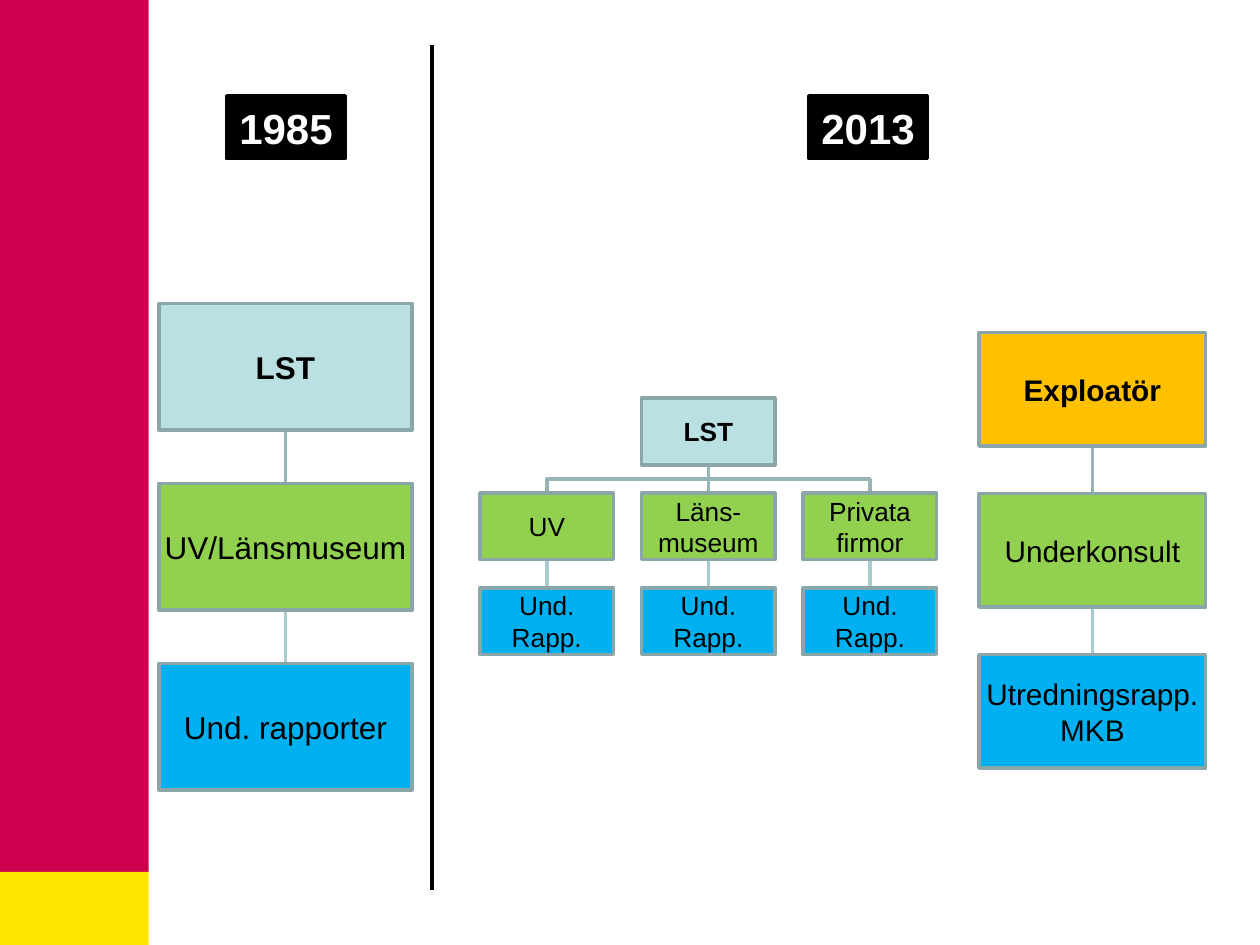
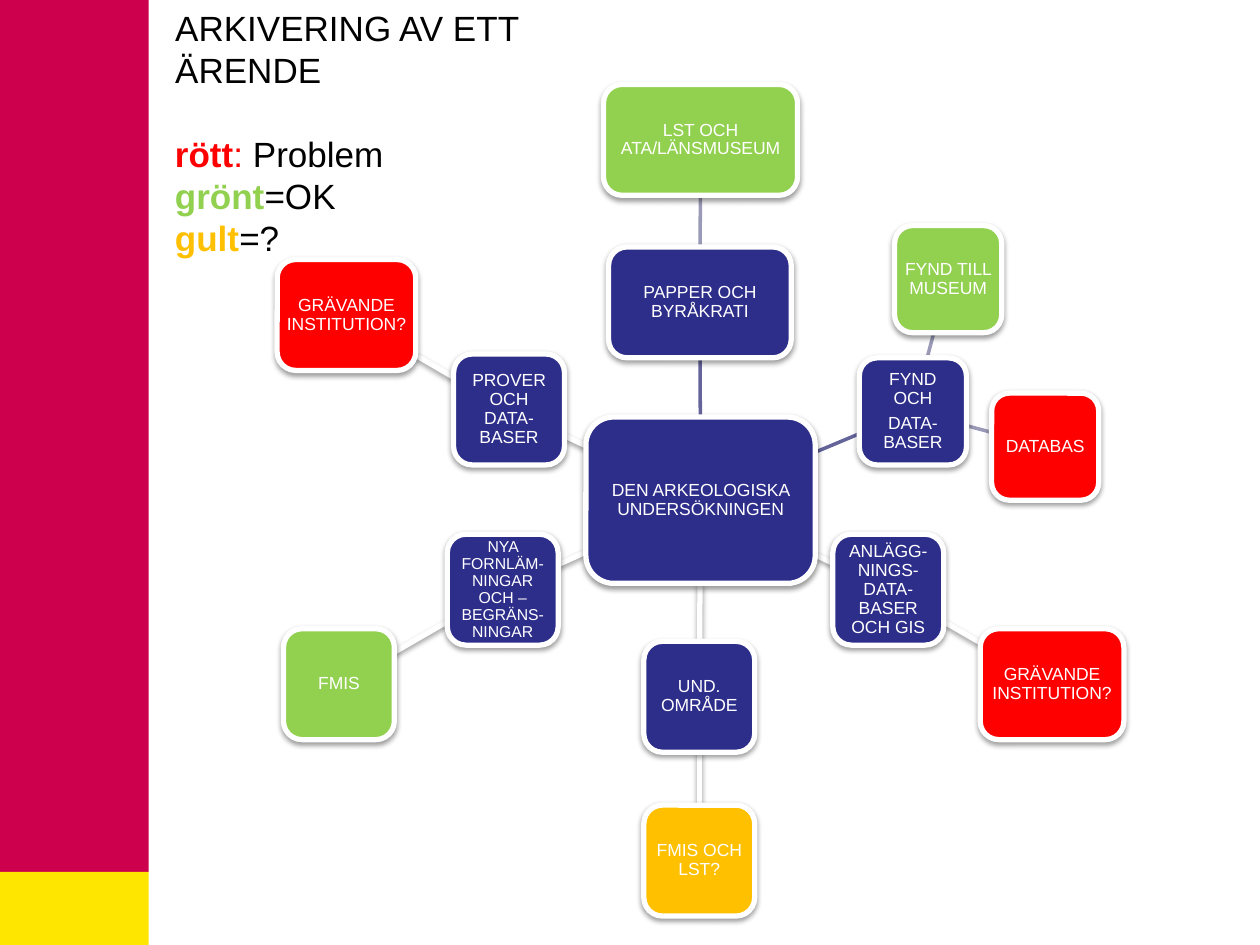
"""Two slides on archaeological commissions: who does what, and where a case is archived."""
from lxml import etree
from pptx import Presentation
from pptx import util as u
from pptx.dml import color
from pptx.enum import shapes, text
from pptx.oxml import ns

Inches = u.Inches
FONT = "Arial"
COLORS = {
    "crimson": "CC004C", "yellow": "FFE600", "black": "000000", "white": "FFFFFF",
    "pale": "BBE0E3", "green": "92D050", "blue": "00B0F0", "amber": "FFC000",
    "red": "FF0000", "navy": "2D2D8A", "border": "8AA6A8", "upper": "96B3B6",
    "lower": "AACBCE", "inner": "64649B", "outer": "9A9AB8",
}
BANDS = [(0, 0, 1.18, 6.92, "crimson"), (0, 6.92, 1.18, 0.58, "yellow")]

YEARS = [("1985", 1.8), ("2013", 6.42)]
DIVIDER = [(3.43, 0.36), (3.43, 7.06)]
GAP_RATIO = 0.21
TREES = [
    dict(left=1.26, top=2.41, width=2.01, size=18, root="LST", fill="pale",
         branches=[("UV/Länsmuseum", "Und. rapporter")]),
    dict(left=3.81, top=3.16, width=1.06, size=15, root="LST", fill="pale",
         branches=[("UV", "Und. Rapp."), ("Läns-\nmuseum", "Und. Rapp."),
                   ("Privata\nfirmor", "Und. Rapp.")]),
    dict(left=7.77, top=2.64, width=1.8, size=17, root="Exploatör", fill="amber",
         branches=[("Underkonsult", "Utredningsrapp.\nMKB")]),
]

HEADING = "ARKIVERING AV ETT ÄRENDE"
LEGEND = [
    [("rött", "red", True), (": ", "red", False), ("Problem", "black", False)],
    [("grönt", "green", True), ("=OK", "black", False)],
    [("gult", "amber", True), ("=?", "black", False)],
]
TOPICS = {
    "dig": ("DEN ARKEOLOGISKA UNDERSÖKNINGEN", (4.65, 3.31, 1.82, 1.32), "navy"),
    "paper": ("PAPPER OCH BYRÅKRATI", (4.83, 1.96, 1.45, 0.88), "navy"),
    "paper archive": ("LST OCH ATA/LÄNSMUSEUM", (4.79, 0.67, 1.54, 0.88), "green"),
    "finds": ("FYND OCH\nDATA-BASER", (6.82, 2.84, 0.85, 0.85), "navy"),
    "museum": ("FYND TILL MUSEUM", (7.1, 1.79, 0.85, 0.85), "green"),
    "database": ("DATABAS", (7.87, 3.12, 0.85, 0.85), "red"),
    "features": ("ANLÄGG-NINGS-DATA-BASER OCH GIS", (6.61, 4.24, 0.88, 0.88), "navy"),
    "features archive": ("GRÄVANDE INSTITUTION?", (7.78, 4.99, 1.14, 0.88), "red"),
    "area": ("UND. OMRÅDE", (5.11, 5.09, 0.88, 0.88), "navy"),
    "area archive": ("FMIS OCH LST?", (5.11, 6.39, 0.88, 0.88), "amber"),
    "remains": ("NYA FORNLÄM-NINGAR OCH –BEGRÄNS-NINGAR", (3.55, 4.24, 0.88, 0.88), "navy"),
    "remains archive": ("FMIS", (2.25, 4.99, 0.88, 0.88), "green"),
    "samples": ("PROVER OCH DATA-BASER", (3.6, 2.81, 0.88, 0.88), "navy"),
    "samples archive": ("GRÄVANDE INSTITUTION?", (2.2, 2.06, 1.1, 0.88), "red"),
}
SMALL_TOPICS = {"remains": 9}
LINKS = [
    ("dig", "samples", "white"), ("dig", "remains", "white"), ("dig", "area", "white"),
    ("dig", "features", "white"), ("dig", "finds", "inner"), ("dig", "paper", "inner"),
    ("paper", "paper archive", "outer"), ("finds", "museum", "outer"),
    ("finds", "database", "outer"), ("features", "features archive", "white"),
    ("area", "area archive", "white"), ("remains", "remains archive", "white"),
    ("samples", "samples archive", "white"),
]


def rgb(name):
    return color.RGBColor.from_string(COLORS[name])


def write(frame, content, size=10, ink="black", bold=False, align=text.PP_ALIGN.CENTER,
          anchor=text.MSO_ANCHOR.MIDDLE, inset=None, wrap=True, line=None, after=None):
    frame.word_wrap = wrap
    frame.auto_size = text.MSO_AUTO_SIZE.NONE
    frame.vertical_anchor = anchor
    if inset is not None:
        frame.margin_left = frame.margin_right = Inches(inset)
        frame.margin_top = frame.margin_bottom = Inches(inset)
    if isinstance(content, str):
        content = [[(part, ink, bold)] for part in content.split("\n")]
    for index, runs in enumerate(content):
        paragraph = frame.add_paragraph() if index else frame.paragraphs[0]
        paragraph.alignment = align
        if line:
            paragraph.line_spacing = line
        if after:
            paragraph.space_after = u.Pt(after)
        for words, run_ink, run_bold in runs:
            run = paragraph.add_run()
            run.text = words
            run.font.name, run.font.size, run.font.bold = FONT, u.Pt(size), run_bold
            run.font.color.rgb = rgb(run_ink)


def set_effects(part, shadow):
    properties = part._element.spPr
    for old in properties.findall(ns.qn("a:effectLst")):
        properties.remove(old)
    effects = etree.SubElement(properties, ns.qn("a:effectLst"))
    if shadow:
        cast = etree.SubElement(effects, ns.qn("a:outerShdw"), blurRad=str(u.Pt(3.1)),
                                dist=str(u.Pt(1.6)), dir="5400000", rotWithShape="0")
        tint = etree.SubElement(cast, ns.qn("a:srgbClr"), val=COLORS["black"])
        etree.SubElement(tint, ns.qn("a:alpha"), val="38000")


def add_box(slide, place, fill, border=None, width=2, rounded=False, shadow=False):
    kind = shapes.MSO_SHAPE.ROUNDED_RECTANGLE if rounded else shapes.MSO_SHAPE.RECTANGLE
    box = slide.shapes.add_shape(kind, *map(Inches, place))
    box.fill.solid()
    box.fill.fore_color.rgb = rgb(fill)
    if border:
        box.line.color.rgb = rgb(border)
        box.line.width = u.Pt(width)
    else:
        box.line.fill.background()
    set_effects(box, shadow)
    return box


def add_line(slide, points, ink, width=2, shadow=False):
    corners = [(Inches(x), Inches(y)) for x, y in points]
    if len(corners) == 2:
        line = slide.shapes.add_connector(shapes.MSO_CONNECTOR.STRAIGHT, *corners[0], *corners[1])
    else:
        builder = slide.shapes.build_freeform(*corners[0], scale=1.0)
        builder.add_line_segments(corners[1:], close=False)
        line = builder.convert_to_shape()
        line.fill.background()
    line.line.color.rgb = rgb(ink)
    line.line.width = u.Pt(width)
    set_effects(line, shadow)


def add_slide(deck, layout):
    slide = deck.slides.add_slide(deck.slide_layouts.get_by_name(layout))
    for *place, fill in BANDS:
        add_box(slide, place, fill)
    return slide


def draw_tree(slide, left, top, width, size, root, fill, branches):
    height, gap = width / 2, width * GAP_RATIO
    tops = [top + level * (height + gap) for level in range(3)]
    columns = [left + index * (width + gap) for index in range(len(branches))]
    root_left = (columns[0] + columns[-1]) / 2
    root_x, root_bottom = root_left + width / 2, top + height
    nodes = [(root, root_left, top, fill, True)]
    for column, (doer, report) in zip(columns, branches):
        x, bend = column + width / 2, root_bottom + gap / 2
        bends = [] if abs(x - root_x) < 0.01 else [(root_x, bend), (x, bend)]
        add_line(slide, [(root_x, root_bottom), *bends, (x, tops[1])], "upper")
        add_line(slide, [(x, tops[1] + height), (x, tops[2])], "lower")
        nodes += [(doer, column, tops[1], "green", False), (report, column, tops[2], "blue", False)]
    for label, node_left, node_top, node_fill, bold in nodes:
        box = add_box(slide, (node_left, node_top, width, height), node_fill, "border")
        write(box.text_frame, label, size=size, bold=bold, inset=0.01)


def center(place):
    left, top, width, height = place
    return left + width / 2, top + height / 2


def edge_toward(place, other):
    (x, y), (goal_x, goal_y) = center(place), center(other)
    dx, dy = goal_x - x, goal_y - y
    reach = min(half / abs(step) for half, step in ((place[2] / 2, dx), (place[3] / 2, dy)) if step)
    return x + dx * reach, y + dy * reach


def build_comparison(deck):
    slide = add_slide(deck, "Blank")
    for tree in TREES:
        draw_tree(slide, **tree)
    for year, left in YEARS:
        box = add_box(slide, (left, 0.76, 0.94, 0.5), "black", "black")
        write(box.text_frame, year, size=24, ink="white", bold=True, wrap=False)
    add_line(slide, DIVIDER, "black")


def build_archiving(deck):
    slide = add_slide(deck, "Title Only")
    for start, end, ink in LINKS:
        here, there = TOPICS[start][1], TOPICS[end][1]
        pale = ink == "white"
        add_line(slide, [edge_toward(here, there), edge_toward(there, here)], ink,
                 width=3 if pale else 2, shadow=pale)
    for key, (label, place, fill) in TOPICS.items():
        box = add_box(slide, place, fill, "white", width=3, rounded=True, shadow=True)
        write(box.text_frame, label, size=SMALL_TOPICS.get(key, 10), ink="white",
              inset=0.03, line=0.9, after=3.5)
    heading = slide.shapes.title
    heading.left, heading.top, heading.width, heading.height = map(Inches, (1.29, 0, 3.09, 0.77))
    legend = slide.shapes.add_textbox(*map(Inches, (1.29, 1, 3.09, 1.12)))
    for part, content in ((heading, HEADING), (legend, LEGEND)):
        write(part.text_frame, content, size=20, align=text.PP_ALIGN.LEFT,
              anchor=text.MSO_ANCHOR.TOP)


def main():
    deck = Presentation()
    deck.slide_width, deck.slide_height = Inches(10), Inches(7.5)
    build_comparison(deck)
    build_archiving(deck)
    deck.save("out.pptx")


if __name__ == "__main__":
    main()
